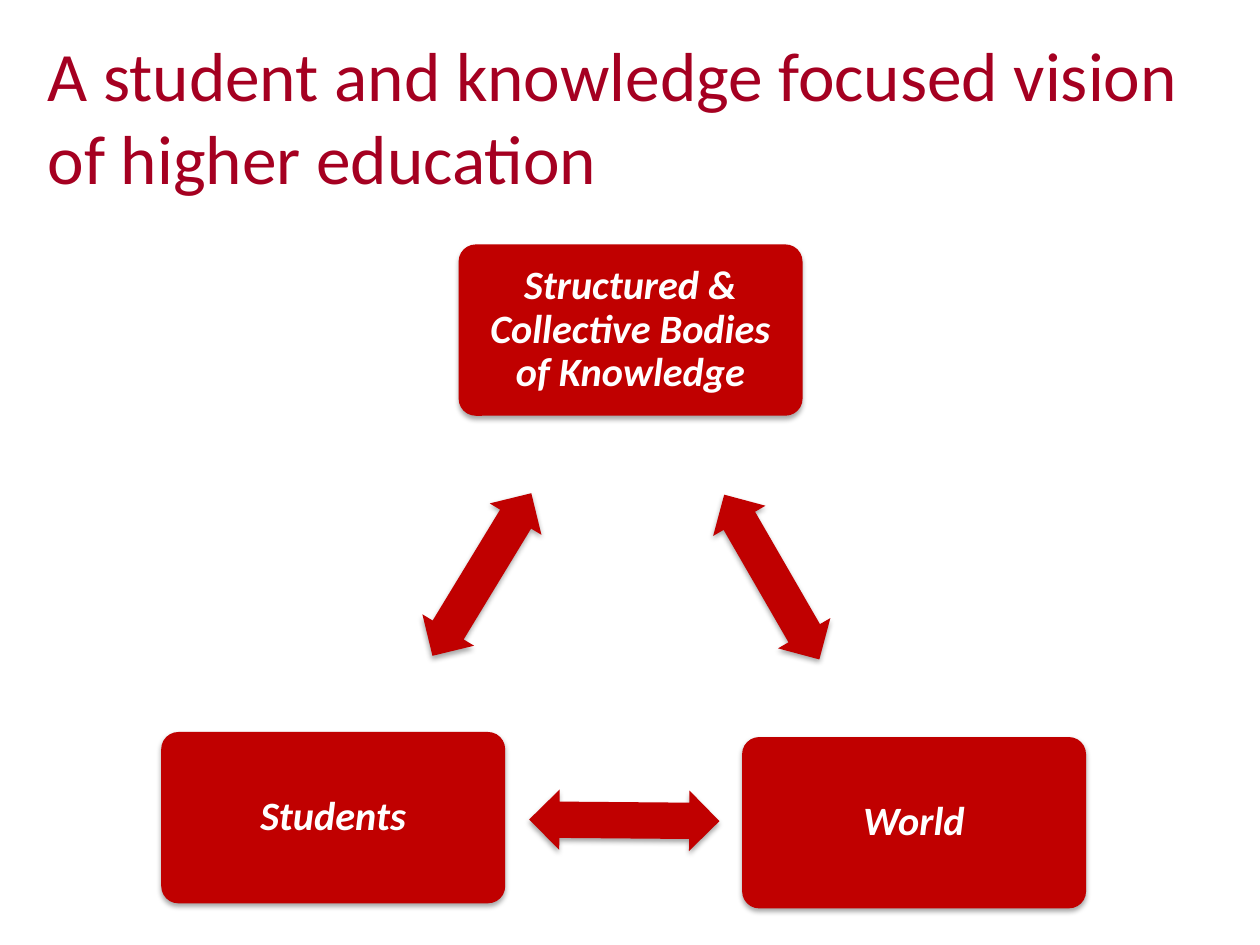
import lxml.etree
import pptx
import pptx.dml.color
import pptx.enum.shapes
import pptx.enum.text
import pptx.oxml
import pptx.oxml.ns
import pptx.util

Inches = pptx.util.Inches
Shape = pptx.enum.shapes.MSO_SHAPE
Align = pptx.enum.text.PP_ALIGN

RED = "C00000"
SHADOW = (
    '<a:outerShdw xmlns:a="http://schemas.openxmlformats.org/drawingml/2006/main"'
    ' blurRad="39370" dist="22860" dir="5400000" rotWithShape="0">'
    '<a:srgbClr val="000000"><a:alpha val="35000"/></a:srgbClr></a:outerShdw>'
)


def color(hex):
    return pptx.dml.color.RGBColor.from_string(hex)


def write(shape, text, size, hue, align=Align.LEFT, bold=False, italic=False,
          inset=(0.1, 0.05), spacing=1.0):
    """Fill a shape with one paragraph; inset is (sides, top and bottom)."""
    frame = shape.text_frame
    frame.word_wrap = True
    frame.vertical_anchor = pptx.enum.text.MSO_ANCHOR.MIDDLE
    frame.margin_left = frame.margin_right = Inches(inset[0])
    frame.margin_top = frame.margin_bottom = Inches(inset[1])
    para = frame.paragraphs[0]
    para.alignment = align
    para.line_spacing = spacing
    run = para.add_run()
    run.text = text
    run.font.name = "Calibri"
    run.font.size = pptx.util.Pt(size)
    run.font.bold = bold
    run.font.italic = italic
    run.font.color.rgb = color(hue)


deck = pptx.Presentation()
deck.slide_width, deck.slide_height = Inches(10), Inches(7.5)
slide = deck.slides.add_slide(deck.slide_layouts[6])

title = slide.shapes.add_textbox(Inches(0.28), Inches(0.29), Inches(9.5), Inches(1.25))
write(title, "A student and knowledge focused vision of higher education", 39.6, "A50021")

# Kind, size, corner or arrow adjustments
box = (Shape.ROUNDED_RECTANGLE, 2.73, 1.36, [0.1])
arrow = (Shape.LEFT_RIGHT_ARROW, 1.51, 0.48, [0.6, 0.5])

# Kind, left, top, rotation, label
parts = [
    (box, 3.64, 1.94, 0, "Structured & Collective Bodies of Knowledge"),
    (arrow, 5.37, 4.34, 60, ""),
    (box, 5.89, 5.85, 0, "World"),
    (arrow, 4.2, 6.27, 180.5, ""),
    (box, 1.28, 5.81, 0, "Students"),
    (arrow, 3.07, 4.32, 301.3, ""),
]

for (kind, width, height, adjust), left, top, turn, label in parts:
    shape = slide.shapes.add_shape(
        kind, Inches(left), Inches(top), Inches(width), Inches(height))
    for i, value in enumerate(adjust):
        shape.adjustments[i] = value
    shape.rotation = turn
    shape.fill.solid()
    shape.fill.fore_color.rgb = color(RED)
    shape.line.fill.background()
    shape.shadow.inherit = False
    effects = shape.element.spPr.find(pptx.oxml.ns.qn("a:effectLst"))
    effects.append(lxml.etree.fromstring(SHADOW))
    if label:
        write(shape, label, 23, "FFFFFF", align=Align.CENTER, bold=True,
              italic=True, inset=(0.1, 0.1), spacing=0.9)

deck.save("out.pptx")
